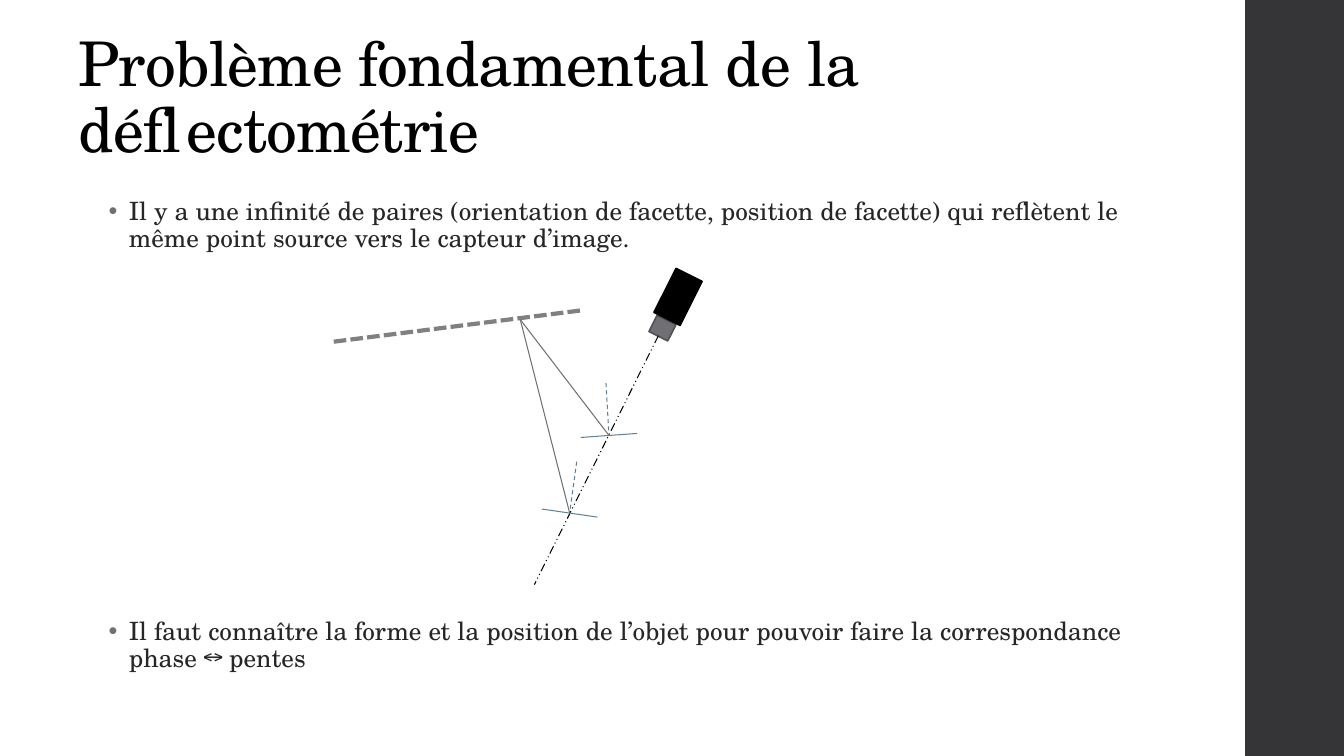
from dataclasses import dataclass

from lxml import etree
from pptx import Presentation
from pptx import util as u
from pptx.dml.color import RGBColor
from pptx.enum import dml, shapes, text
from pptx.oxml.ns import qn


@dataclass(frozen=True)
class Theme:
    face: str = "TeX Gyre Schola"
    head: int = 44
    body: int = 18
    thin: float = 0.75
    edge: float = 1.1
    thick: float = 3
    black: str = "000000"
    ink: str = "262626"
    band: str = "353537"
    grey: str = "6F6F74"
    rim: str = "525256"
    screen: str = "808080"
    blue: str = "618197"


T = Theme()
CELL = u.Inches(0.1)
COLS, ROWS = 133.3, 75
TILT = 296.6
DASH = dml.MSO_LINE


def grid(n):
    return round(n * CELL)


def color(code):
    return RGBColor.from_string(code)


def rect(slide, box, fill, edge=None, turn=0):
    shape = slide.shapes.add_shape(shapes.MSO_SHAPE.RECTANGLE, *map(grid, box))
    shape.shadow.inherit = False
    shape.rotation = turn
    shape.fill.solid()
    shape.fill.fore_color.rgb = color(fill)
    if edge:
        shape.line.color.rgb = color(edge)
        shape.line.width = u.Pt(T.edge)
    else:
        shape.line.fill.background()
    return shape


def line(slide, box, start, end, tone, width=T.thin, dash=None):
    x, y = box[:2]
    ends = (x + start[0], y + start[1], x + end[0], y + end[1])
    link = slide.shapes.add_connector(
        shapes.MSO_CONNECTOR.STRAIGHT, *map(grid, ends))
    link.line.color.rgb = color(tone)
    link.line.width = u.Pt(width)
    if dash:
        link.line.dash_style = dash
    etree.SubElement(link._element.spPr, qn("a:effectLst"))
    return link


def words(slide, box, copy, size, tone):
    frame = slide.shapes.add_textbox(*map(grid, box)).text_frame
    frame.word_wrap = True
    frame.vertical_anchor = text.MSO_ANCHOR.TOP
    para = frame.paragraphs[0]
    para.text = copy
    para.line_spacing = 0.9
    font = para.runs[0].font
    font.name = T.face
    font.size = u.Pt(size)
    font.color.rgb = color(tone)
    return para


def title(slide, box, copy):
    para = words(slide, box, copy, T.head, T.black)
    para.runs[0]._r.get_or_add_rPr().set("spc", "-50")


def bullet(slide, box, copy):
    para = words(slide, box, copy, T.body, T.ink)
    props = para._p.get_or_add_pPr()
    props.set("marL", str(u.Inches(0.5)))
    props.set("indent", str(-u.Inches(0.2)))
    tint = etree.SubElement(props, qn("a:buClr"))
    etree.SubElement(tint, qn("a:srgbClr")).set("val", T.grey)
    etree.SubElement(props, qn("a:buFont")).set("typeface", "Arial")
    etree.SubElement(props, qn("a:buChar")).set("char", "•")


def facet(slide, box, source, hit, half, norm):
    x, y = hit
    dx, dy = half
    line(slide, box, (x - dx, y - dy), (x + dx, y + dy), T.blue)
    line(slide, box, (x + norm[0], y + norm[1]), hit, T.blue,
         dash=DASH.DASH)
    line(slide, box, hit, source, T.grey)


def camera(slide, box, spot, size, fill, edge):
    x, y = box[0] + spot[0], box[1] + spot[1]
    wide, high = size
    return rect(slide, (x - wide / 2, y - high / 2, wide, high),
                fill, edge, TILT)


def scheme(slide, box):
    source = (18.6, 5.7)
    line(slide, box, (0.1, 7.9), (24.6, 4.8), T.screen, T.thick,
         DASH.SQUARE_DOT)
    lens = camera(slide, box, (32.7, 6.55), (1.8, 2.1), T.grey, T.rim)
    camera(slide, box, (34.25, 3.45), (4.9, 2.9), T.black, T.black)
    start = (32.3, 7.3)
    axis = line(slide, box, start, (20, 32), T.black,
                dash=DASH.DASH_DOT_DOT)
    axis.begin_connect(lens, 1)
    axis.begin_x = grid(box[0] + start[0])
    axis.begin_y = grid(box[1] + start[1])
    facet(slide, box, source, (27.4, 17.2), (2.8, -0.2), (-0.3, -5.2))
    facet(slide, box, source, (23.5, 24.9), (2.75, 0.4), (0.7, -5.1))


def main():
    deck = Presentation()
    deck.slide_width, deck.slide_height = grid(COLS), grid(ROWS)
    slide = deck.slides.add_slide(deck.slide_layouts[6])
    rect(slide, (123.5, 0, COLS - 123.5, ROWS), T.band)
    left, wide = 6.8, 112.5
    title(slide, (left, 2.8, 93.3, 16.5),
          "Problème fondamental de la déflectométrie")
    bullet(slide, (left, 19.2, wide, 6.4),
           "Il y a une infinité de paires (orientation de facette, position "
           "de facette) qui reflètent le même point source vers le capteur "
           "d’image.")
    bullet(slide, (left, 60.9, wide, 6.4),
           "Il faut connaître la forme et la position de l’objet pour "
           "pouvoir faire la correspondance phase ↔ pentes")
    scheme(slide, (33, 26, 37, 32))
    deck.save("out.pptx")


if __name__ == "__main__":
    main()
